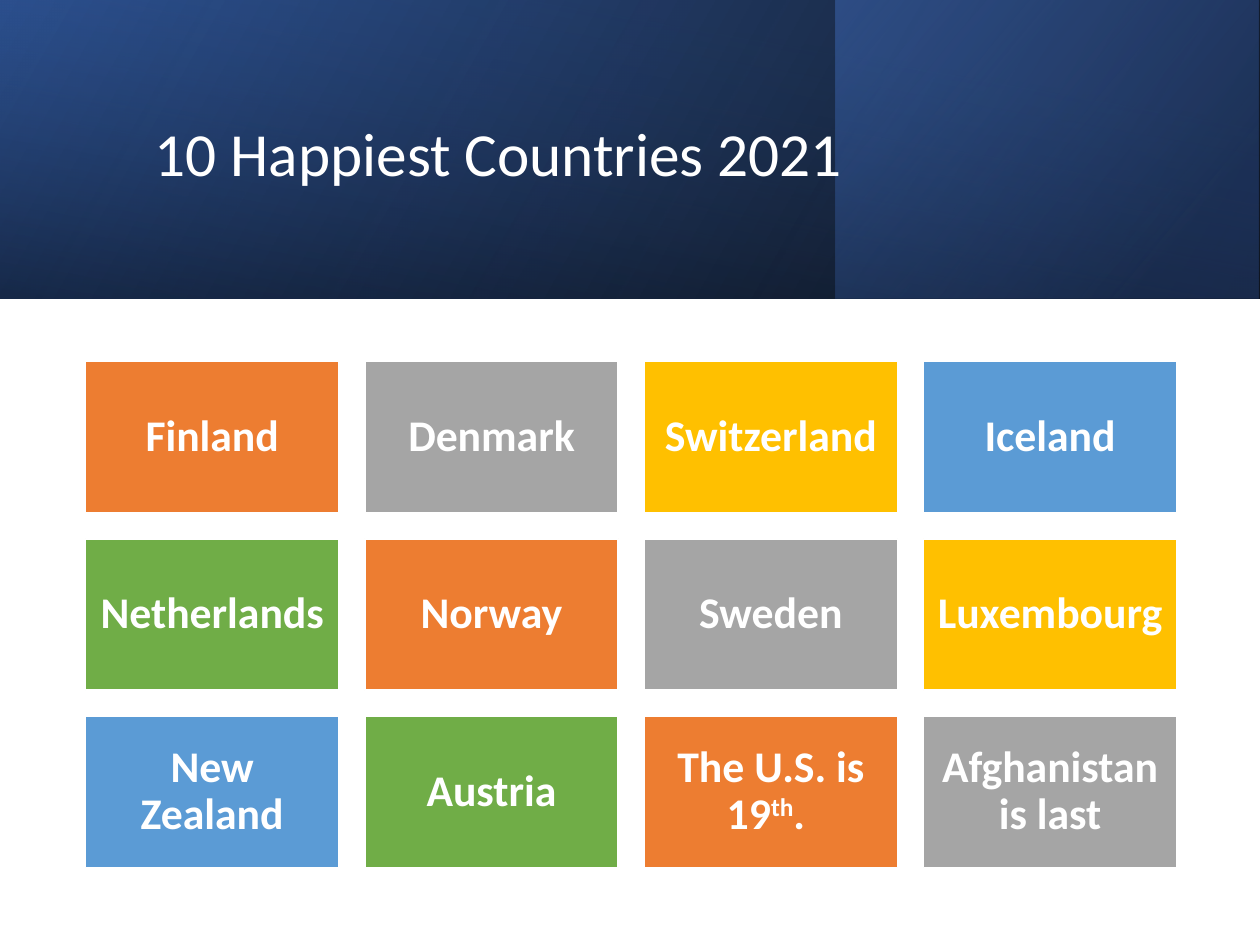
"""Build the slide of the ten happiest countries."""
import lxml.etree
import pptx
import pptx.dml.color
import pptx.enum.shapes
import pptx.enum.text
import pptx.oxml.ns
import pptx.util

Pt = pptx.util.Pt
qn = pptx.oxml.ns.qn
RECT = pptx.enum.shapes.MSO_SHAPE.RECTANGLE
ALIGN = pptx.enum.text.PP_ALIGN
MIDDLE = pptx.enum.text.MSO_ANCHOR.MIDDLE
HUES = {
    "white": "FFFFFF", "black": "000000", "navy": "2F5597",
    "dark": "203864", "blue": "4472C4", "orange": "ED7D31",
    "gray": "A5A5A5", "gold": "FFC000", "sky": "5B9BD5", "green": "70AD47",
}


def color(name):
    return pptx.dml.color.RGBColor.from_string(HUES[name])


def write(shape, runs, size, bold, align):
    frame = shape.text_frame
    frame.word_wrap = True
    frame.vertical_anchor = MIDDLE
    frame.margin_left = frame.margin_right = Pt(7.2)
    frame.margin_top = frame.margin_bottom = Pt(7.2)
    para = frame.paragraphs[0]
    para.alignment = align
    para.line_spacing = 0.9
    for text, lift in runs:
        run = para.add_run()
        run.text = text
        run.font.name = "Calibri"
        run.font.size = Pt(size)
        run.font.bold = bold
        run.font.color.rgb = color("white")
        if lift:
            run.font._element.set("baseline", str(lift * 1000))


deck = pptx.Presentation()
deck.slide_width, deck.slide_height = Pt(720), Pt(540)
slide = deck.slides.add_slide(deck.slide_layouts[6])
shapes = slide.shapes

bands = [
    ((0, 0, 720, 170.6), 0, 330, [(0, "black", 96), (100, "navy", 100)]),
    ((477.4, 0, 242, 170.6), 0, 320, [(19, "dark", 68), (100, "blue", 48)]),
    ((274.7, -274.7, 170.6, 720), 270, 350, [(23, "navy", 16), (99, "black", 45)]),
]
for box, turn, angle, stops in bands:
    band = shapes.add_shape(RECT, *map(Pt, box))
    band.shadow.inherit = False
    band.line.fill.background()
    band.rotation = turn
    props = band._element.spPr
    props.find(qn("a:xfrm")).set("flipH", "1")
    grad = lxml.etree.Element(qn("a:gradFill"), rotWithShape="1")
    items = lxml.etree.SubElement(grad, qn("a:gsLst"))
    for place, name, alpha in stops:
        stop = lxml.etree.SubElement(items, qn("a:gs"), pos=str(place * 1000))
        hue = lxml.etree.SubElement(stop, qn("a:srgbClr"), val=HUES[name])
        lxml.etree.SubElement(hue, qn("a:alpha"), val=str(alpha * 1000))
    lxml.etree.SubElement(grad, qn("a:lin"), ang=str(angle * 60000), scaled="0")
    props.find(qn("a:prstGeom")).addnext(grad)

title = shapes.add_textbox(Pt(81.4), Pt(27.4), Pt(573.8), Pt(123.8))
write(title, [("10 Happiest Countries 2021", 0)], 35, False, ALIGN.LEFT)

lands = [
    [("Finland", 0)], [("Denmark", 0)], [("Switzerland", 0)], [("Iceland", 0)],
    [("Netherlands", 0)], [("Norway", 0)], [("Sweden", 0)], [("Luxembourg", 0)],
    [("New Zealand", 0)], [("Austria", 0)],
    [("The U.S. is 19", 0), ("th", 30), (". ", 0)],
    [("Afghanistan is last", 0)],
]
cycle = ["orange", "gray", "gold", "sky", "green"]
wide, high, gap = 144.8, 86.6, 14.8
for index, runs in enumerate(lands):
    row, col = divmod(index, 4)
    left = 48.9 + col * (wide + gap)
    top = 206.4 + row * (high + gap)
    tile = shapes.add_shape(RECT, Pt(left), Pt(top), Pt(wide), Pt(high))
    tile.shadow.inherit = False
    tile.fill.solid()
    tile.fill.fore_color.rgb = color(cycle[index % len(cycle)])
    tile.line.color.rgb = color("white")
    tile.line.width = Pt(1)
    write(tile, runs, 25, True, ALIGN.CENTER)

deck.save("out.pptx")
